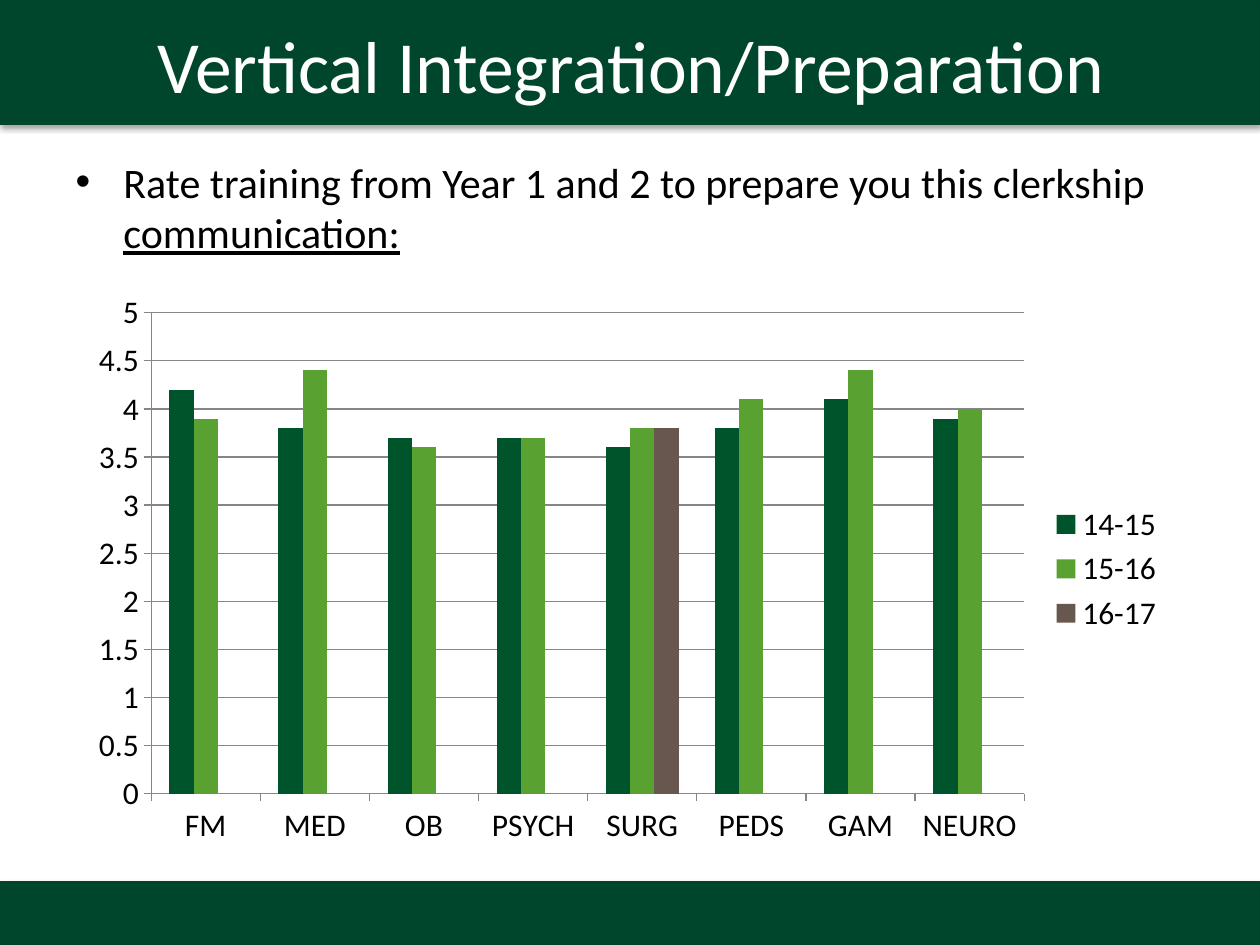
"""Build a slide charting how well Years 1 and 2 prepared students for each clerkship."""
import dataclasses

import lxml.etree
import pptx
import pptx.chart.data
import pptx.dml.color
import pptx.enum.chart
import pptx.enum.shapes
import pptx.enum.text
import pptx.oxml
import pptx.oxml.ns
import pptx.util
from pptx.util import Inches


@dataclasses.dataclass(frozen=True)
class Theme:
    font: str = "Calibri"
    band: str = "00462D"
    band_line: str = "00442D"
    title: str = "FFFFFF"
    text: str = "000000"
    axis: str = "868686"
    series: tuple = ("00542C", "59A131", "67574E")
    title_size: int = 42
    body_size: int = 24
    chart_size: int = 18


theme = Theme()
rgb = pptx.dml.color.RGBColor.from_string


def add_text(p, text, size, color, underline=None):
    r = p.add_run()
    r.text = text
    r.font.name = theme.font
    r.font.size = pptx.util.Pt(size)
    r.font.color.rgb = rgb(color)
    r.font.underline = underline


prs = pptx.Presentation()
prs.slide_width, prs.slide_height = Inches(10), Inches(7.5)
s = prs.slides.add_slide(prs.slide_layouts[1])

shadow_xml = (
    f'<a:effectLst {pptx.oxml.ns.nsdecls("a")}>'
    '<a:outerShdw blurRad="40000" dist="23000" dir="5400000" rotWithShape="0">'
    '<a:srgbClr val="000000"><a:alpha val="35000"/></a:srgbClr>'
    '</a:outerShdw></a:effectLst>'
)
for i, (top, height) in enumerate([(0, 0.99), (7, 0.5)]):
    sp = s.shapes.add_shape(pptx.enum.shapes.MSO_SHAPE.RECTANGLE,
                            0, Inches(top), prs.slide_width, Inches(height))
    sp.fill.solid()
    sp.fill.fore_color.rgb = rgb(theme.band)
    sp.line.color.rgb = rgb(theme.band_line)
    sp.line.width = pptx.util.Pt(0.75)
    sp.element.spPr.append(pptx.oxml.parse_xml(shadow_xml))
    s.shapes.element.insert(2 + i, sp.element)

title = s.shapes.title
title.left, title.top, title.width, title.height = map(Inches, (0.19, 0.01, 9.63, 0.99))
tf = title.text_frame
tf.vertical_anchor = pptx.enum.text.MSO_ANCHOR.MIDDLE
p = tf.paragraphs[0]
p.alignment = pptx.enum.text.PP_ALIGN.CENTER
add_text(p, "Vertical Integration/Preparation", theme.title_size, theme.title)

body = s.placeholders[1]
body.left, body.top, body.width, body.height = map(Inches, (0.5, 1.19, 9, 5.6))
p = body.text_frame.paragraphs[0]
pPr = p._p.get_or_add_pPr()
pPr.set("marL", str(Inches(0.38)))
pPr.set("indent", str(Inches(-0.38)))
lxml.etree.SubElement(pPr, pptx.oxml.ns.qn("a:buChar"), char="•")
p.space_before = pptx.util.Pt(0)
add_text(p, "Rate training from Year 1 and 2 to prepare you this clerkship ",
         theme.body_size, theme.text)
add_text(p, "communication:", theme.body_size, theme.text, underline=True)

data = pptx.chart.data.CategoryChartData()
data.categories = ["FM", "MED", "OB", "PSYCH", "SURG", "PEDS", "GAM", "NEURO"]
data.add_series("14-15", [4.2, 3.8, 3.7, 3.7, 3.6, 3.8, 4.1, 3.9])
data.add_series("15-16", [3.9, 4.4, 3.6, 3.7, 3.8, 4.1, 4.4, 4])
data.add_series("16-17", [None, None, None, None, 3.8, None, None, None])
chart = s.shapes.add_chart(pptx.enum.chart.XL_CHART_TYPE.COLUMN_CLUSTERED,
                           *map(Inches, (0.61, 2.24, 8.73, 4.55)), data).chart
chart.has_title = False
chart.font.name = theme.font
chart.font.size = pptx.util.Pt(theme.chart_size)
chart.font.color.rgb = rgb(theme.text)
chart.has_legend = True
chart.legend.position = pptx.enum.chart.XL_LEGEND_POSITION.RIGHT
chart.legend.include_in_layout = False

plot = chart.plots[0]
plot.gap_width = 150
plot.overlap = 0
plot.vary_by_categories = False
for series, color in zip(plot.series, theme.series):
    series.format.fill.solid()
    series.format.fill.fore_color.rgb = rgb(color)

for axis in (chart.category_axis, chart.value_axis):
    axis.major_tick_mark = pptx.enum.chart.XL_TICK_MARK.OUTSIDE
    axis.format.line.color.rgb = rgb(theme.axis)
axis = chart.value_axis
axis.minimum_scale, axis.maximum_scale, axis.major_unit = 0, 5, 0.5
axis.tick_labels.number_format = "General"
axis.tick_labels.number_format_is_linked = False
axis.has_major_gridlines = True
axis.major_gridlines.format.line.color.rgb = rgb(theme.axis)

prs.save("out.pptx")
